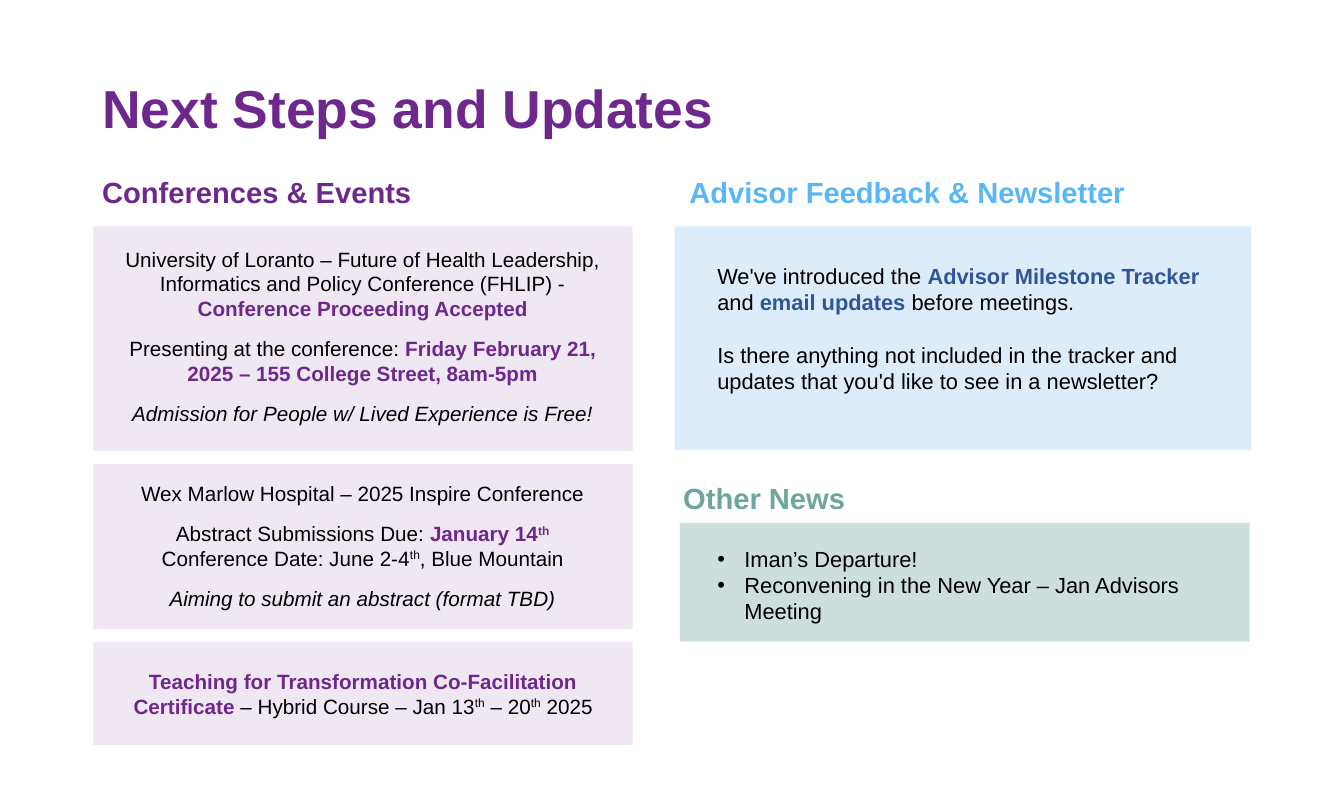
from lxml import etree
from pptx import Presentation, util as u
from pptx.dml.color import RGBColor
from pptx.enum import shapes, text
from pptx.oxml.ns import qn

PURPLE, LILAC = "6E288D", "D3BFDD"
SKY, PALE, NAVY = "5AB7F6", "BBDDF4", "305598"
GREEN, BLACK = "6EA59C", "000000"


def paint(color, code):
    color.rgb = RGBColor.from_string(code)


class Deck:
    """Holds the shared style and the current slide."""

    font = "Arial"

    def __init__(self, width, height):
        self.show = Presentation()
        self.show.slide_width = u.Inches(width)
        self.show.slide_height = u.Inches(height)
        self.slide = self.show.slides.add_slide(self.show.slide_layouts[5])

    def style(self, run, size, color, bold=False):
        run.font.name = self.font
        run.font.size = u.Pt(size)
        run.font.bold = bold
        paint(run.font.color, color)

    def title(self, words, box):
        holder = self.slide.shapes.title
        holder.left, holder.top, holder.width, holder.height = map(u.Inches, box)
        frame = holder.text_frame
        frame.text = words
        frame.auto_size = text.MSO_AUTO_SIZE.NONE
        frame.vertical_anchor = text.MSO_ANCHOR.BOTTOM
        par = frame.paragraphs[0]
        par.alignment = text.PP_ALIGN.LEFT
        par.line_spacing = 0.9
        self.style(par.runs[0], 44, PURPLE, True)

    def panel(self, box, color, alpha):
        kind = shapes.MSO_SHAPE.RECTANGLE
        rect = self.slide.shapes.add_shape(kind, *map(u.Inches, box))
        rect.shadow.inherit = False
        rect.line.fill.background()
        rect.fill.solid()
        paint(rect.fill.fore_color, color)
        tint = rect._element.spPr.find(qn("a:solidFill")).find(qn("a:srgbClr"))
        etree.SubElement(tint, qn("a:alpha")).set("val", str(alpha * 1000))

    def frame(self, box):
        frame = self.slide.shapes.add_textbox(*map(u.Inches, box)).text_frame
        frame.word_wrap = True
        return frame

    def heading(self, words, box, color):
        frame = self.frame(box)
        frame.text = words
        self.style(frame.paragraphs[0].runs[0], 24, color, True)

    def body(self, box, pars, size, accent=BLACK, gap=0, center=False, bullet=False):
        frame = self.frame(box)
        for n, (parts, apart) in enumerate(pars):
            par = frame.add_paragraph() if n else frame.paragraphs[0]
            par.alignment = text.PP_ALIGN.CENTER if center else text.PP_ALIGN.LEFT
            par.space_before = u.Pt(gap if apart else 0)
            for words, marks in parts:
                run = par.add_run()
                run.text = words
                bold = "b" in marks
                self.style(run, size, accent if bold else BLACK, bold)
                run.font.italic = "i" in marks
                if "^" in marks:
                    run._r.get_or_add_rPr().set("baseline", "30000")
            if bullet:
                self.bullet(par)

    def bullet(self, par):
        props = par._p.get_or_add_pPr()
        indent = u.Inches(0.31)
        props.set("marL", str(indent))
        props.set("indent", str(-indent))
        etree.SubElement(props, qn("a:buFont")).set("typeface", self.font)
        etree.SubElement(props, qn("a:buChar")).set("char", "•")


def main():
    deck = Deck(15.38, 9.15)
    deck.title("Next Steps and Updates", (1.07, -0.12, 13.27, 1.77))

    for words, box, color in [
        ("Conferences & Events", (1.07, 1.94, 3.78, 0.5), PURPLE),
        ("Advisor Feedback & Newsletter", (7.79, 1.94, 5.24, 0.5), SKY),
        ("Other News", (7.72, 5.45, 2.07, 0.5), GREEN),
    ]:
        deck.heading(words, box, color)

    for top, height in [(2.59, 2.57), (5.31, 1.89), (7.34, 1.18)]:
        deck.panel((1.07, top, 6.17, height), LILAC, 35)
    deck.panel((7.72, 2.59, 6.6, 2.56), PALE, 50)
    deck.panel((7.78, 5.98, 6.52, 1.36), GREEN, 35)

    forum = [
        ([("University of Loranto – Future of Health Leadership, "
           "Informatics and Policy Conference (FHLIP) -", ""),
          (" Conference Proceeding Accepted", "b")], False),
        ([("Presenting at the conference: ", ""),
          ("Friday February 21, 2025 – 155 College Street, 8am-5pm", "b")], True),
        ([("Admission for People w/ Lived Experience is Free!", "i")], True),
    ]
    inspire = [
        ([("Wex Marlow Hospital – 2025 Inspire Conference", "")], False),
        ([("Abstract Submissions Due: ", ""), ("January 14", "b"),
          ("th", "b^")], True),
        ([("Conference Date: June 2-4", ""), ("th", "^"),
          (", Blue Mountain", "")], False),
        ([("Aiming to submit an abstract (format TBD)", "i")], True),
    ]
    course = [
        ([("Teaching for Transformation Co-Facilitation Certificate ", "b"),
          ("– Hybrid Course – Jan 13", ""), ("th", "^"),
          (" – 20", ""), ("th", "^"), (" 2025", "")], False),
    ]
    for box, pars in [
        ((1.24, 2.77, 5.82, 2.17), forum),
        ((1.24, 5.45, 5.82, 1.6), inspire),
        ((1.34, 7.6, 5.63, 0.67), course),
    ]:
        deck.body(box, pars, 17, PURPLE, gap=12.5, center=True)

    advice = [
        ([("We've introduced the ", ""), ("Advisor Milestone Tracker", "b"),
          (" and ", ""), ("email updates", "b"), (" before meetings.", "")], False),
        ([("Is there anything not included in the tracker and updates "
           "that you'd like to see in a newsletter?", "")], True),
    ]
    deck.body((8.11, 2.95, 5.82, 1.62), advice, 18, NAVY, gap=22)

    news = [
        ([("Iman’s Departure!", "")], False),
        ([("Reconvening in the New Year – Jan Advisors Meeting", "")], False),
    ]
    deck.body((8.11, 6.19, 5.82, 1.01), news, 18, bullet=True)

    deck.show.save("out.pptx")


if __name__ == "__main__":
    main()
